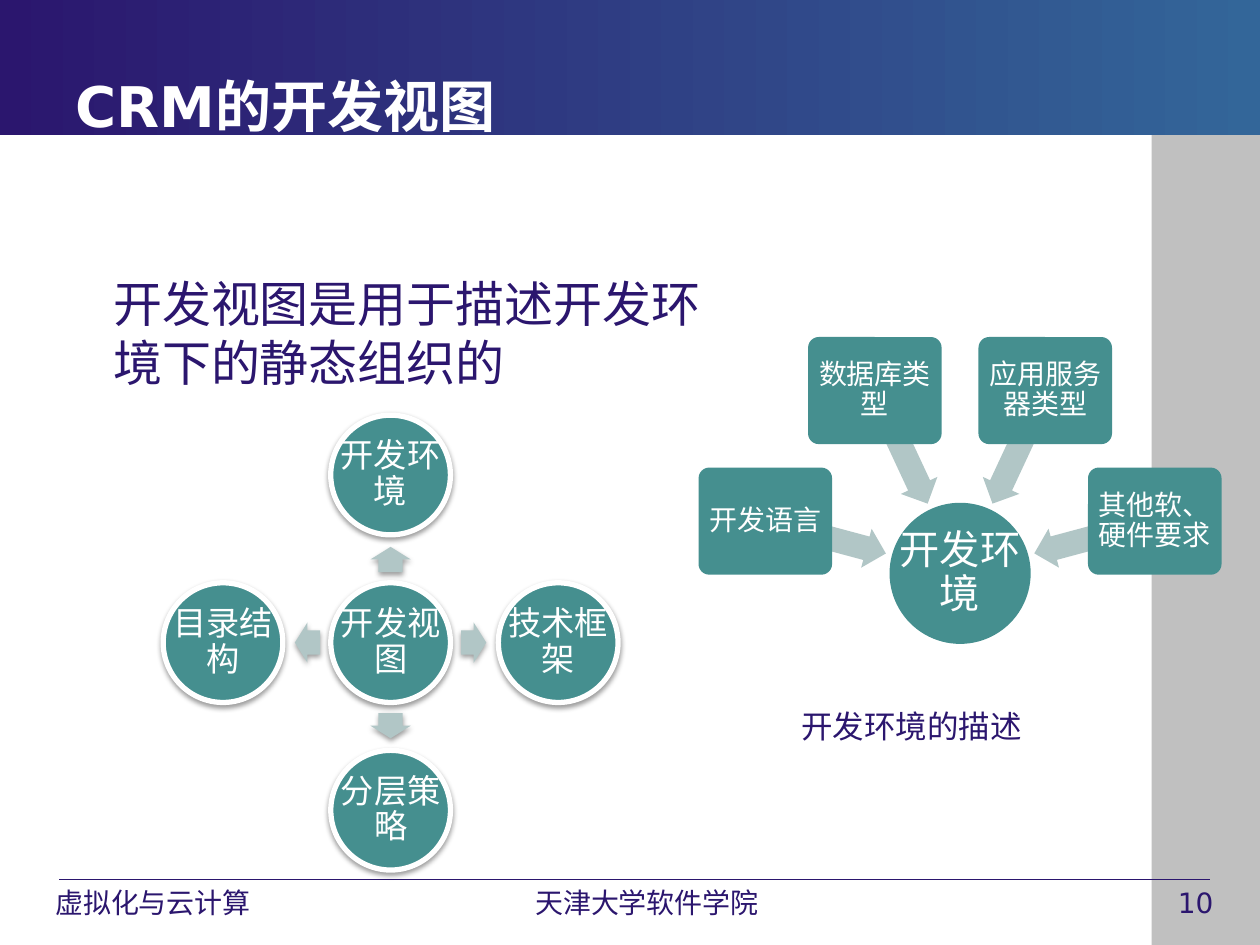
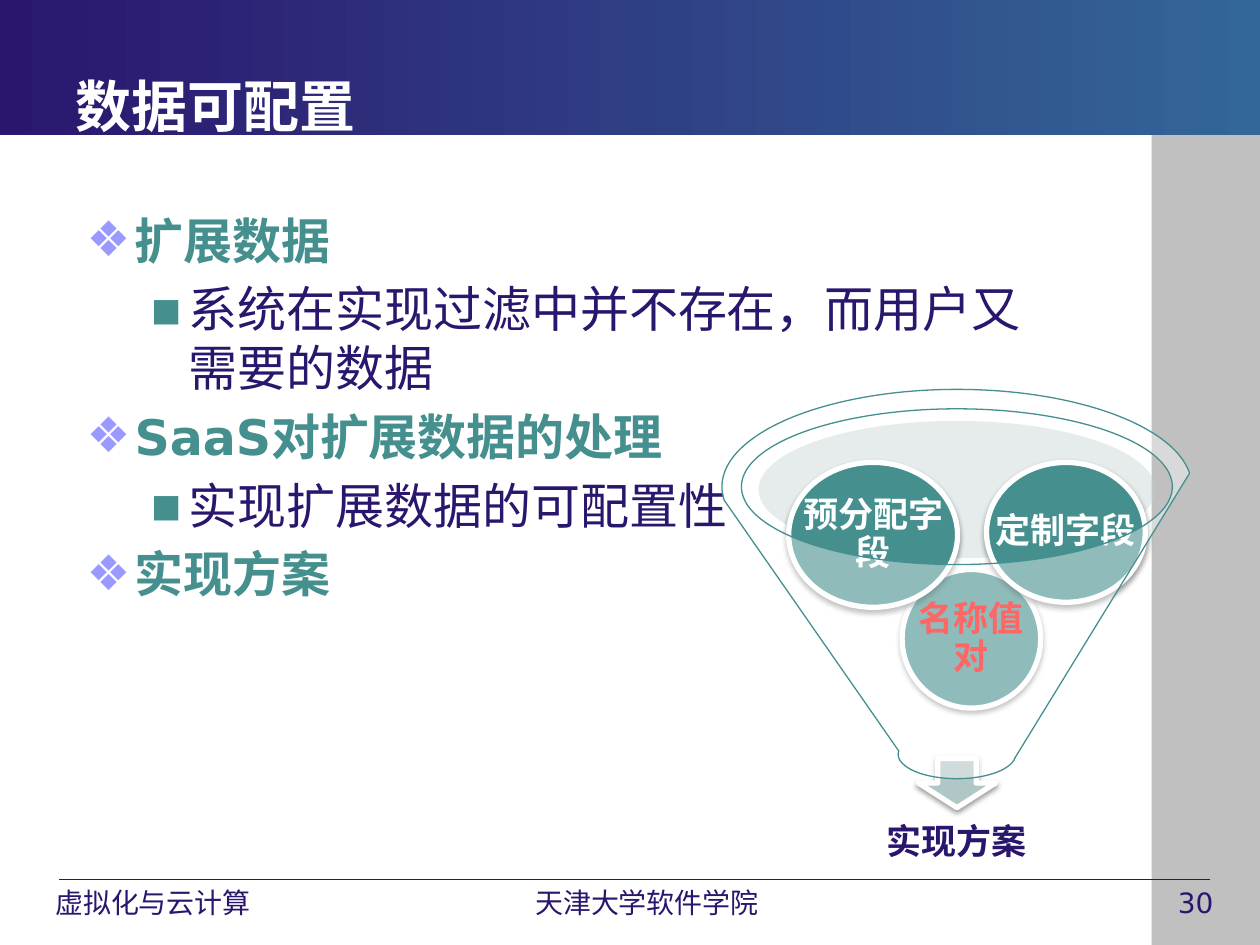
import math

import lxml.etree
import pptx
import pptx.dml.color
import pptx.enum.shapes
import pptx.enum.text
import pptx.oxml.ns
import pptx.util
from pptx.util import Inches

SHAPES = pptx.enum.shapes.MSO_SHAPE
ALIGN = pptx.enum.text.PP_ALIGN
ANCHOR = pptx.enum.text.MSO_ANCHOR
FONT = "DejaVu Sans"
COLORS = {
    "navy": "2B166E",
    "blue": "336699",
    "grey": "C0C0C0",
    "teal": "458F8F",
    "arrow": "B1C6C6",
    "mist": "C1D1D1",
    "lilac": "9999FF",
    "red": "FF0000",
    "white": "FFFFFF",
    "black": "000000",
}


def rgb(color):
    return pptx.dml.color.RGBColor.from_string(COLORS[color])


def add_xml(parent, tag, **attributes):
    return lxml.etree.SubElement(parent, pptx.oxml.ns.qn(tag), attributes)


def add_soft_shadow(shape):
    effects = shape._element.spPr.find(pptx.oxml.ns.qn("a:effectLst"))
    shadow = add_xml(effects, "a:outerShdw", blurRad=str(pptx.util.Pt(3.1)),
                     dist=str(pptx.util.Pt(1.6)), dir="5400000", rotWithShape="0")
    color = add_xml(shadow, "a:srgbClr", val=COLORS["black"])
    add_xml(color, "a:alpha", val="38000")


def add_figure(slide, kind, box, fill, outline=None, weight=3, opacity=None,
               shadow=False, rotation=0, adjustments=()):
    """Draw a preset shape in box (left, top, width, height in inches)."""
    figure = slide.shapes.add_shape(kind, *map(Inches, box))
    figure.rotation = rotation
    for index, value in enumerate(adjustments):
        figure.adjustments[index] = value
    figure.fill.solid()
    figure.fill.fore_color.rgb = rgb(fill)
    if opacity is not None:
        color = figure._element.spPr.find(".//" + pptx.oxml.ns.qn("a:srgbClr"))
        add_xml(color, "a:alpha", val=str(opacity * 1000))
    if outline:
        figure.line.color.rgb = rgb(outline)
        figure.line.width = pptx.util.Pt(weight)
    else:
        figure.line.fill.background()
    figure.shadow.inherit = False
    if shadow:
        add_soft_shadow(figure)
    return figure


def format_runs(paragraph, size, color, bold=False, font=FONT):
    for run in paragraph.runs:
        run.font.size = pptx.util.Pt(size)
        run.font.color.rgb = rgb(color)
        run.font.bold = bold
        run.font.name = font
        add_xml(run.font._element, "a:ea", typeface=FONT)


def add_text(slide, text, box, size, color="navy", bold=False, font=FONT,
             align=ALIGN.LEFT, anchor=ANCHOR.TOP):
    frame = slide.shapes.add_textbox(*map(Inches, box)).text_frame
    frame.word_wrap = True
    frame.vertical_anchor = anchor
    frame.text = text
    for paragraph in frame.paragraphs:
        paragraph.alignment = align
        format_runs(paragraph, size, color, bold, font)
    return frame


def add_label(slide, text, box, size, color="white", bold=False, inset=0.03):
    """Centre tightly set text over a figure."""
    frame = add_text(slide, text, box, size, color, bold,
                     align=ALIGN.CENTER, anchor=ANCHOR.MIDDLE)
    frame.margin_left = frame.margin_right = Inches(inset)
    frame.margin_top = frame.margin_bottom = Inches(inset)
    frame.paragraphs[0].line_spacing = 0.9


def add_ball(slide, text, box, size, color="white", bold=False):
    add_figure(slide, SHAPES.OVAL, box, "teal", outline="white", shadow=True)
    add_label(slide, text, box, size, color, bold)


def box_around(center, width, height):
    return center[0] - width / 2, center[1] - height / 2, width, height


def polar(center, radius, degrees):
    angle = math.radians(degrees)
    return (center[0] + radius * math.cos(angle),
            center[1] + radius * math.sin(angle))


def set_indent(paragraph, left, hanging=0):
    properties = paragraph._p.get_or_add_pPr()
    properties.set("marL", str(Inches(left)))
    properties.set("indent", str(Inches(-hanging)))
    return properties


def add_bullet(paragraph, mark, color, left, hanging):
    properties = set_indent(paragraph, left, hanging)
    add_xml(add_xml(properties, "a:buClr"), "a:srgbClr", val=COLORS[color])
    add_xml(properties, "a:buFont", typeface=FONT)
    add_xml(properties, "a:buChar", char=mark)


def add_framed_slide(deck, title, number):
    """Start a slide with the side band, title band, footer and title."""
    slide = deck.slides.add_slide(deck.slide_layouts[6])
    add_figure(slide, SHAPES.RECTANGLE, (9.14, 1.07, 0.86, 6.43), "grey")

    rule = slide.shapes.add_connector(
        pptx.enum.shapes.MSO_CONNECTOR.STRAIGHT,
        *map(Inches, (0.47, 6.98, 9.6, 6.98)))
    rule.line.color.rgb = rgb("navy")
    rule.line.width = pptx.util.Pt(0.75)
    add_xml(rule._element.spPr, "a:effectLst")

    band = add_figure(slide, SHAPES.RECTANGLE, (0, 0, 10, 1.07), "navy")
    band.fill.gradient()
    band.fill.gradient_angle = 0
    for stop, color in zip(band.fill.gradient_stops, ("navy", "blue")):
        stop.color.rgb = rgb(color)

    add_text(slide, str(number), (9.25, 6.98, 0.71, 0.35), 16)
    add_text(slide, "虚拟化与云计算 ", (0.28, 6.98, 1.94, 0.35), 16,
             align=ALIGN.CENTER)
    add_text(slide, "天津大学软件学院", (4.01, 6.98, 2.25, 0.35), 16,
             align=ALIGN.CENTER)
    add_text(slide, title, (0.5, 0.21, 9, 1.25), 32, "white", bold=True,
             anchor=ANCHOR.MIDDLE)
    return slide


def add_view_cross(slide):
    hub, ball = (3.1, 5.1), 0.95
    add_ball(slide, "开发视图", box_around(hub, ball, ball), 19)
    aspects = {270: "开发环境", 0: "技术框架", 90: "分层策略", 180: "目录结构"}
    for angle, aspect in aspects.items():
        add_figure(slide, SHAPES.RIGHT_ARROW,
                   box_around(polar(hub, 0.66, angle), 0.2, 0.32), "arrow",
                   shadow=True, rotation=angle, adjustments=(0.6, 0.5))
        add_ball(slide, aspect,
                 box_around(polar(hub, 1.33, angle), ball, ball), 19)


def add_environment_fan(slide):
    hub = (7.62, 4.55)
    hub_box = box_around(hub, 1.12, 1.12)
    add_figure(slide, SHAPES.OVAL, hub_box, "teal")
    add_label(slide, "开发环境", hub_box, 23, inset=0.02)
    factors = ("开发语言", "数据库类型", "应用服务器类型", "其他软、硬件要求")
    for index, factor in enumerate(factors):
        angle = 195 + 50 * index
        add_figure(slide, SHAPES.LEFT_ARROW,
                   box_around(polar(hub, 1.1, angle), 0.98, 0.32), "arrow",
                   rotation=angle, adjustments=(0.6, 0.5))
        factor_box = box_around(polar(hub, 1.6, angle), 1.06, 0.85)
        add_figure(slide, SHAPES.ROUNDED_RECTANGLE, factor_box, "teal",
                   adjustments=(0.1,))
        add_label(slide, factor, factor_box, 16)


def add_outline(slide, entries):
    """List (level, text) entries as headings and points."""
    frame = add_text(slide, "\n".join(text for _, text in entries),
                     (0.59, 1.62, 7.8, 4.41), 28)
    for paragraph, (level, _) in zip(frame.paragraphs, entries):
        paragraph.level = level
        paragraph.space_before = pptx.util.Pt(5.6)
        if level == 0:
            add_bullet(paragraph, "❖", "lilac", 0.38, 0.38)
            for run in paragraph.runs:
                run.font.bold = True
                run.font.color.rgb = rgb("teal")
        else:
            add_bullet(paragraph, "▪", "teal", 0.81, 0.31)
            for run in paragraph.runs:
                run.font.name = "Arial"


def add_solution_funnel(slide):
    add_figure(slide, SHAPES.OVAL, (6.02, 3.34, 3.15, 1.09), "mist", opacity=40)
    add_figure(slide, SHAPES.DOWN_ARROW, (7.29, 6.02, 0.61, 0.39), "arrow",
               outline="white", shadow=True)
    add_label(slide, "实现方案", (6.13, 6.33, 2.93, 0.73), 20, "navy",
              bold=True, inset=0.16)
    ingredients = (
        ("名称值对", (7.16, 4.52, 1.1, 1.1), "red"),
        ("预分配字段", (6.26, 3.67, 1.34, 1.15), "white"),
        ("定制字段", (7.83, 3.67, 1.26, 1.11), "white"),
    )
    for text, box, color in ingredients:
        add_ball(slide, text, box, 20, color, bold=True)
    add_figure(slide, SHAPES.FUNNEL, (5.73, 3.09, 3.73, 3.09), "white",
               outline="teal", weight=0.75, opacity=40)


def build_development_view(deck):
    slide = add_framed_slide(deck, "CRM的开发视图", 10)
    add_view_cross(slide)
    summary = add_text(slide, "开发视图是用于描述开发环境下的静态组织的",
                       (0.5, 2.12, 5.21, 4.8), 28).paragraphs[0]
    summary.space_before = pptx.util.Pt(5.6)
    set_indent(summary, 0.3)
    add_environment_fan(slide)
    add_text(slide, "开发环境的描述", (6.26, 5.56, 3.39, 0.4), 18, font="Arial")


def build_configurable_data(deck):
    slide = add_framed_slide(deck, "数据可配置", 30)
    add_outline(slide, (
        (0, "扩展数据"),
        (1, "系统在实现过滤中并不存在，而用户又需要的数据"),
        (0, "SaaS对扩展数据的处理"),
        (1, "实现扩展数据的可配置性"),
        (0, "实现方案"),
    ))
    add_solution_funnel(slide)


def main():
    deck = pptx.Presentation()
    deck.slide_width, deck.slide_height = Inches(10), Inches(7.5)
    build_development_view(deck)
    build_configurable_data(deck)
    deck.save("out.pptx")


if __name__ == "__main__":
    main()
